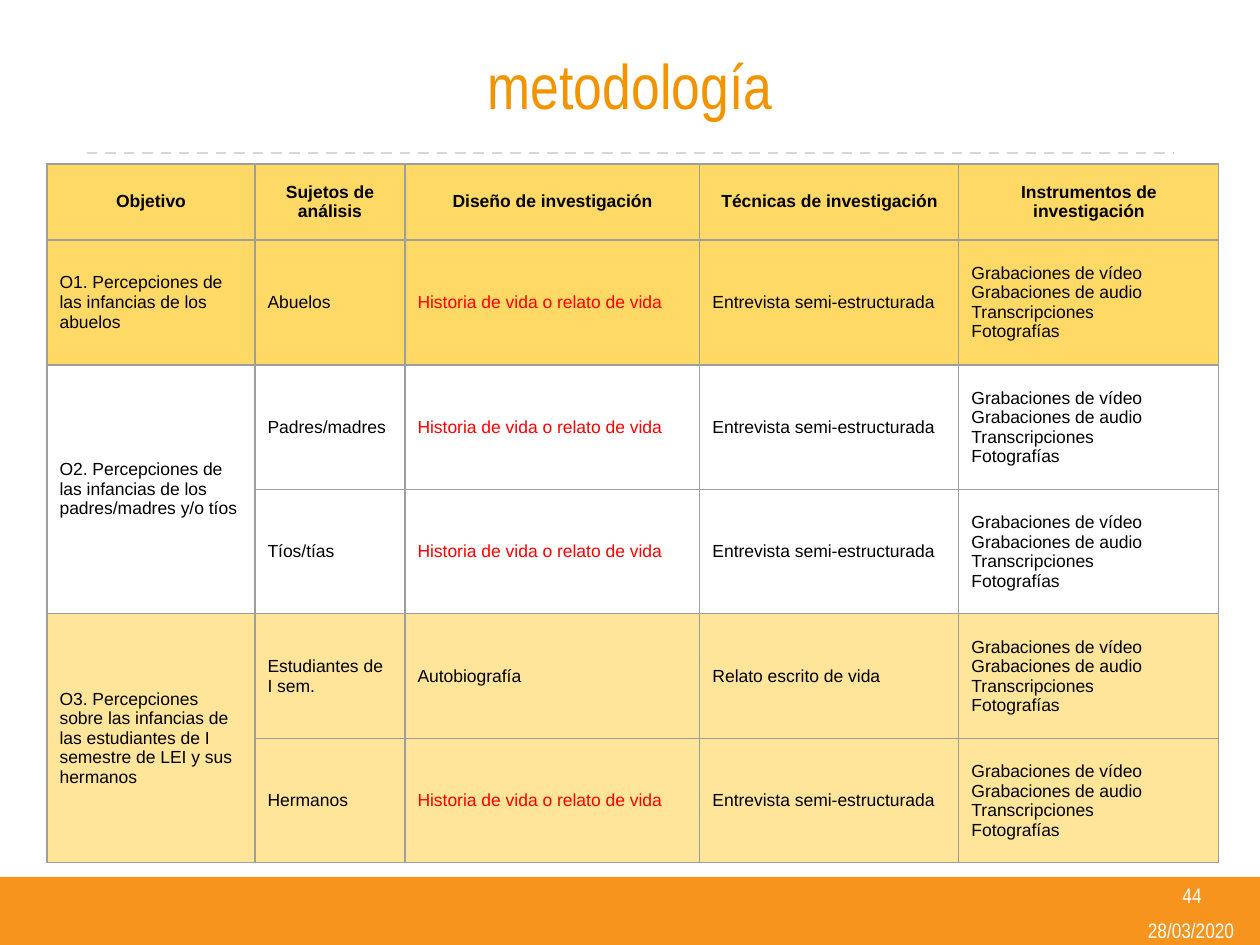
import pptx
import pptx.dml.color
import pptx.enum.dml
import pptx.enum.shapes
import pptx.enum.text
import pptx.oxml
import pptx.oxml.ns
import pptx.util

RGB = pptx.dml.color.RGBColor
ALIGN = pptx.enum.text.PP_ALIGN
MIDDLE = pptx.enum.text.MSO_ANCHOR.MIDDLE

BLACK = RGB(0x00, 0x00, 0x00)
WHITE = RGB(0xFF, 0xFF, 0xFF)
RED = RGB(0xFF, 0x00, 0x00)
ORANGE = RGB(0xF7, 0x94, 0x1D)
TITLE_ORANGE = RGB(0xF2, 0x94, 0x00)
RULE_GREY = RGB(0xD8, 0xD8, 0xD8)
BORDER_GREY = RGB(0x9E, 0x9E, 0x9E)
GOLD = RGB(0xFF, 0xD9, 0x66)
PALE_GOLD = RGB(0xFF, 0xE5, 0x99)

HEADERS = ["Objetivo", "Sujetos de análisis", "Diseño de investigación",
           "Técnicas de investigación", "Instrumentos de investigación"]
LIFE_STORY = "Historia de vida o relato de vida"
INTERVIEW = "Entrevista semi-estructurada"
INSTRUMENTS = "\n".join(["Grabaciones de vídeo", "Grabaciones de audio",
                         "Transcripciones", "Fotografías"])
# objective, fill, (subjects, design, technique) for each of its rows
OBJECTIVES = [
    ("O1. Percepciones de las infancias de los abuelos", GOLD,
     [("Abuelos", LIFE_STORY, INTERVIEW)]),
    ("O2. Percepciones de las infancias de los padres/madres y/o tíos", None,
     [("Padres/madres", LIFE_STORY, INTERVIEW),
      ("Tíos/tías", LIFE_STORY, INTERVIEW)]),
    ("O3. Percepciones sobre las infancias de las estudiantes de I semestre "
     "de LEI y sus hermanos", PALE_GOLD,
     [("Estudiantes de I sem.", "Autobiografía", "Relato escrito de vida"),
      ("Hermanos", LIFE_STORY, INTERVIEW)]),
]
COL_WIDTHS = [208, 150, 295, 259, 260]
ROW_HEIGHTS = [76, 125, 125, 124, 125, 124]
FOOTER_TEXTS = [("28/03/2020", (1124, 917, 134, 26)),
                ("44", (1126, 876, 132, 38))]


def px(n):
    return pptx.util.Emu(round(n * 914400 / 126))


def format_text(tf, font, size, color, align, bold=False):
    tf.vertical_anchor = MIDDLE
    for p in tf.paragraphs:
        p.alignment = align
        for r in p.runs:
            r.font.name = font
            r.font.size = pptx.util.Pt(size)
            r.font.bold = bold
            r.font.color.rgb = color


def style_cell(cell, fill):
    """Set the margins, the four borders and the fill."""
    cell.margin_left = cell.margin_right = px(12.6)
    cell.margin_top = cell.margin_bottom = px(12.6)
    tcPr = cell._tc.get_or_add_tcPr()
    for side in "LRTB":
        tcPr.append(pptx.oxml.parse_xml(
            f'<a:ln{side} {pptx.oxml.ns.nsdecls("a")} w="9525"><a:solidFill>'
            f'<a:srgbClr val="{BORDER_GREY}"/></a:solidFill></a:ln{side}>'))
    if fill is None:
        cell.fill.background()
    else:
        cell.fill.solid()
        cell.fill.fore_color.rgb = fill


def fill_row(table, row, texts, fill, header=False):
    for col, text in enumerate(texts):
        cell = table.cell(row, col)
        style_cell(cell, fill)
        cell.text_frame.text = text
        format_text(cell.text_frame, "Arial", 10,
                    RED if text == LIFE_STORY else BLACK,
                    ALIGN.CENTER if header else ALIGN.LEFT, header)
        cell.vertical_anchor = MIDDLE


def add_footer(s):
    bar = s.shapes.add_shape(pptx.enum.shapes.MSO_SHAPE.RECTANGLE,
                             px(0), px(877), px(1260), px(70))
    bar.shadow.inherit = False
    bar.fill.solid()
    bar.fill.fore_color.rgb = ORANGE
    bar.line.fill.background()
    for text, box in FOOTER_TEXTS:
        tf = s.shapes.add_textbox(*map(px, box)).text_frame
        tf.word_wrap = True
        tf.text = text
        format_text(tf, "Arial Narrow", 12, WHITE, ALIGN.CENTER)


def add_title(s):
    title = s.shapes.title
    title.left, title.top, title.width, title.height = map(px, (87, 16, 1086, 136))
    title.text_frame.text = "metodología"
    format_text(title.text_frame, "Arial Narrow", 36, TITLE_ORANGE, ALIGN.CENTER)

    rule = s.shapes.add_connector(pptx.enum.shapes.MSO_CONNECTOR.STRAIGHT,
                                  px(87), px(153), px(1173), px(153))
    rule.line.color.rgb = RULE_GREY
    rule.line.width = pptx.util.Pt(1.5)
    rule.line.dash_style = pptx.enum.dml.MSO_LINE.DASH
    rule._element.spPr.append(pptx.oxml.parse_xml(
        f'<a:effectLst {pptx.oxml.ns.nsdecls("a")}/>'))


def add_methods_table(s):
    table = s.shapes.add_table(
        len(ROW_HEIGHTS), len(COL_WIDTHS), px(47), px(164),
        px(sum(COL_WIDTHS)), px(sum(ROW_HEIGHTS))).table
    table.first_row = table.horz_banding = False
    for column, width in zip(table.columns, COL_WIDTHS):
        column.width = px(width)
    for table_row, height in zip(table.rows, ROW_HEIGHTS):
        table_row.height = px(height)

    fill_row(table, 0, HEADERS, GOLD, header=True)
    row = 1
    for objective, fill, studies in OBJECTIVES:
        first = row
        for study in studies:
            label = objective if row == first else ""
            fill_row(table, row, [label, *study, INSTRUMENTS], fill)
            row += 1
        if len(studies) > 1:
            table.cell(first, 0).merge(table.cell(row - 1, 0))


def main():
    prs = pptx.Presentation()
    prs.slide_width, prs.slide_height = px(1260), px(945)
    s = prs.slides.add_slide(prs.slide_layouts[5])
    add_footer(s)
    add_title(s)
    add_methods_table(s)
    prs.save("out.pptx")


if __name__ == "__main__":
    main()
